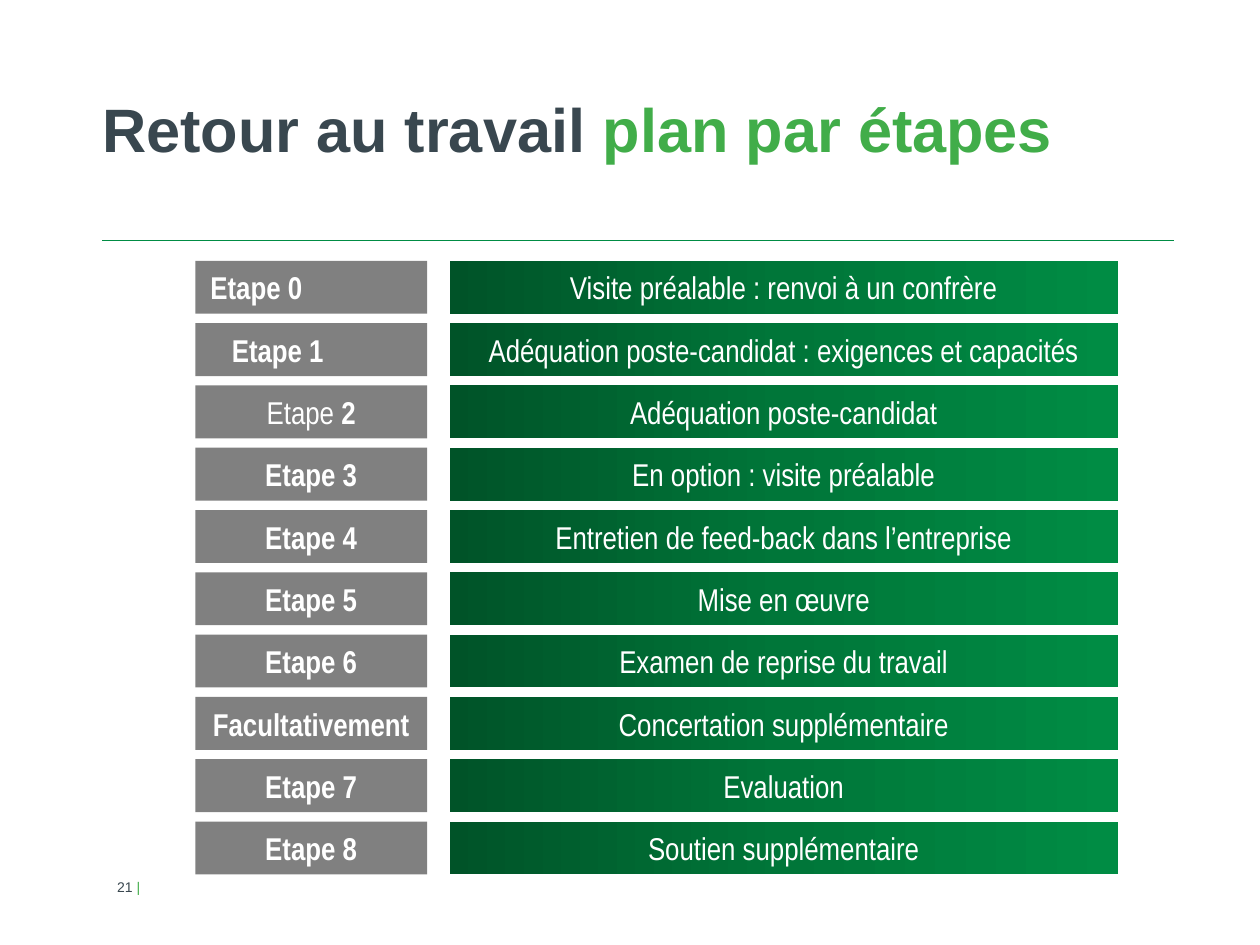
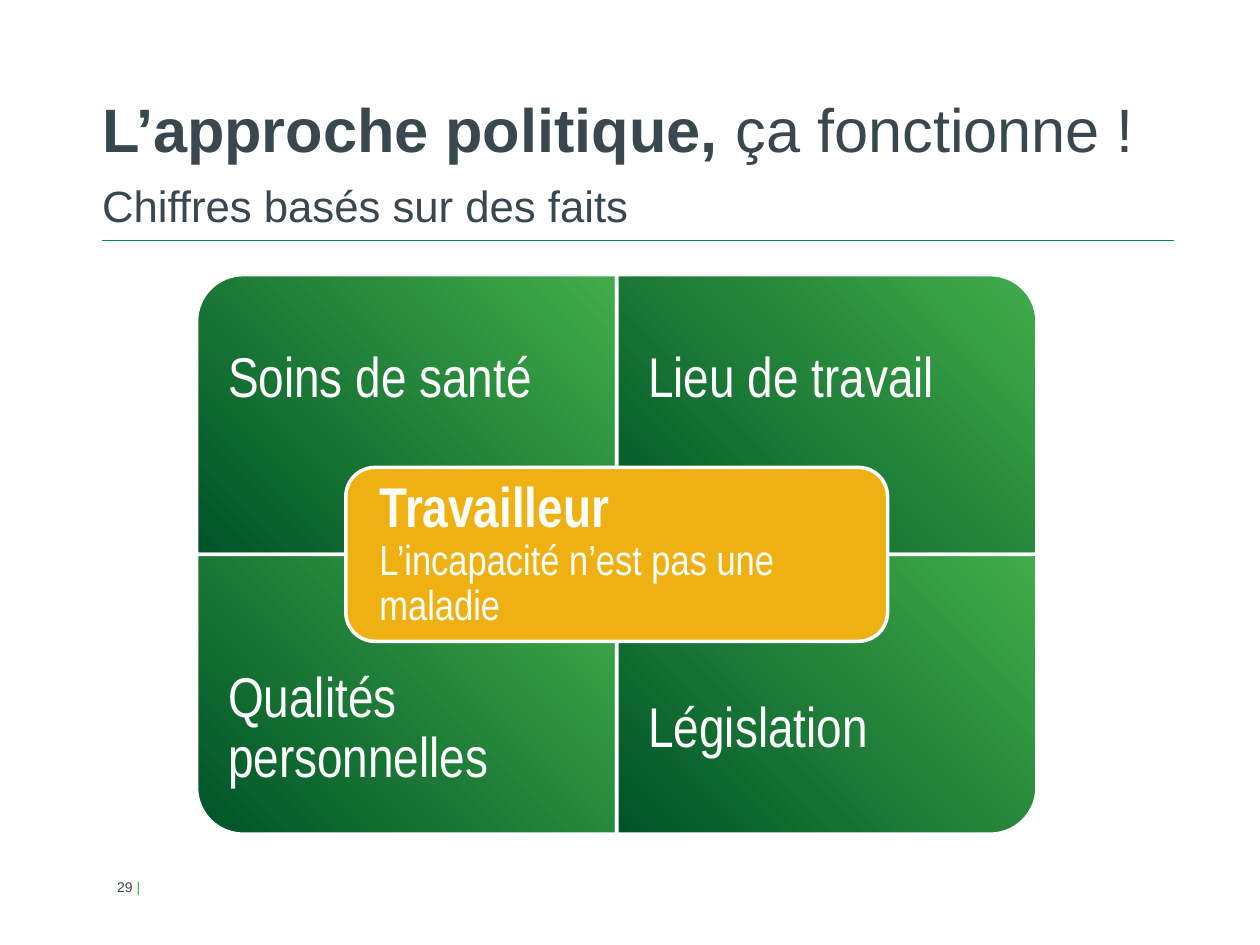
import pptx
import pptx.util
import pptx.dml.color
import pptx.enum.shapes
import pptx.enum.text
import pptx.oxml
from lxml import etree
from pptx.oxml.ns import qn

Inches = pptx.util.Inches
KIND = pptx.enum.shapes.MSO_SHAPE
ALIGN = pptx.enum.text.PP_ALIGN
ANCHOR = pptx.enum.text.MSO_ANCHOR

# Shared colours and fonts
SLATE, LIME, GREEN, DARK = "39474F", "41AD49", "008C44", "005328"
WHITE, GREY, GOLD = "FFFFFF", "808080", "EEB111"
SANS, SLIM = "Arial", "Arial Narrow"


def ink(code):
    return pptx.dml.color.RGBColor.from_string(code)


def write(shape, paras, size=18, font=SLIM, color=WHITE, bold=False,
          align=ALIGN.LEFT, anchor=ANCHOR.MIDDLE, inset=(0, 0, 0, 0), lines=None):
    """Each paragraph is a list of (text, format changes) pairs."""
    frame = shape.text_frame
    frame.word_wrap = True
    frame.auto_size = pptx.enum.text.MSO_AUTO_SIZE.NONE
    frame.vertical_anchor = anchor
    (frame.margin_left, frame.margin_top,
     frame.margin_right, frame.margin_bottom) = map(Inches, inset)
    for i, runs in enumerate(paras):
        para = frame.add_paragraph() if i else frame.paragraphs[0]
        para.alignment = align
        para.space_before = pptx.util.Pt(0)
        if lines:
            para.line_spacing = lines
        for text, change in runs:
            run = para.add_run()
            run.text = text
            run.font.name = font
            run.font.size = pptx.util.Pt(change.get("size", size))
            run.font.bold = change.get("bold", bold)
            run.font.color.rgb = ink(change.get("color", color))


def blend(shape, stops, angle):
    """Fill with a gradient that stays fixed when the shape turns."""
    shape.fill.gradient()
    shape.fill.gradient_angle = angle
    grad = shape._element.spPr.find(qn("a:gradFill"))
    grad.set("rotWithShape", "0")
    group = grad.find(qn("a:gsLst"))
    for stop in list(group):
        group.remove(stop)
    for pos, code in stops:
        stop = etree.SubElement(group, qn("a:gs"), pos=str(pos * 1000))
        etree.SubElement(stop, qn("a:srgbClr"), val=code)


def block(slide, kind, box, fill=None, edge=None):
    shape = slide.shapes.add_shape(kind, *map(Inches, box))
    shape.shadow.inherit = False
    if fill:
        shape.fill.solid()
        shape.fill.fore_color.rgb = ink(fill)
    if edge:
        shape.line.color.rgb = ink(edge)
        shape.line.width = pptx.util.Pt(2)
    else:
        shape.line.fill.background()
    return shape


def place(shape, box):
    shape.left, shape.top, shape.width, shape.height = map(Inches, box)
    return shape


def label(slide, box, paras, **form):
    write(slide.shapes.add_textbox(*map(Inches, box)), paras, **form)


def base(deck, layout, number, title, sub=None):
    """Title, optional subtitle, rule and page number."""
    slide = deck.slides.add_slide(deck.slide_layouts[layout])
    write(place(slide.shapes.title, (0.81, 0.34, 8.51, 0.97)), [title],
          size=35, font=SANS, color=SLATE, bold=True, anchor=ANCHOR.BOTTOM)
    if sub:
        write(place(slide.placeholders[1], (0.81, 1.42, 8.51, 0.47)), [[(sub, {})]],
              size=25, font=SANS, color=SLATE, anchor=ANCHOR.TOP)
    rule = slide.shapes.add_connector(
        pptx.enum.shapes.MSO_CONNECTOR.STRAIGHT,
        Inches(0.81), Inches(1.91), Inches(9.32), Inches(1.91))
    rule.line.color.rgb = ink(GREEN)
    rule.line.width = pptx.util.Pt(0.5)
    etree.SubElement(rule._element.spPr, qn("a:effectLst"))
    label(slide, (0.93, 6.9, 2.33, 0.28),
          [[(f"{number} ", {}), ("|", {"color": LIME})]],
          size=8, font=SANS, color=SLATE)
    return slide


def ladder(slide, box, steps):
    """Rows of a grey step name and a green description."""
    left, top, width, height = box
    tall, name, gap = 0.42, 1.84, 0.18
    pitch = (height - tall) / (len(steps) - 1)
    for i, (runs, text, shift) in enumerate(steps):
        y = top + i * pitch
        tag = block(slide, KIND.RECTANGLE, (left, y, name, tall), GREY)
        write(tag, [runs], bold=True, inset=(shift or 0.1, 0.05, 0.1, 0.05),
              align=ALIGN.LEFT if shift else ALIGN.CENTER)
        bar = block(slide, KIND.RECTANGLE,
                    (left + name + gap, y, width - name - gap, tall))
        blend(bar, [(0, DARK), (50, "007639"), (100, GREEN)], 0)
        write(bar, [[(text, {})]], align=ALIGN.CENTER, inset=(0.1, 0.05, 0.1, 0.05))


def matrix(slide, box, names, core):
    """Four quarters, rounded on the outside, around a central box."""
    left, top, width, height = box
    wide, tall, deep = width / 2, height / 2, height * 3 / 8
    for i, (name, turn) in enumerate(zip(names, (270, 0, 180, 90))):
        row, col = divmod(i, 2)
        x, y = left + col * wide, top + row * tall
        w, h = (tall, wide) if turn % 180 else (wide, tall)
        part = block(slide, KIND.ROUND_1_RECTANGLE,
                     (x + (wide - w) / 2, y + (tall - h) / 2, w, h), edge=WHITE)
        part.rotation = turn
        blend(part, [(0, DARK), (100, LIME)], 45)
        label(slide, (x, y + row * (tall - deep), wide, deep), [[(name, {})]],
              size=32, lines=0.9, inset=(0.25,) * 4)
    w, h = 4.3, 1.38
    heart = block(slide, KIND.ROUNDED_RECTANGLE,
                  (left + (width - w) / 2, top + (height - h) / 2, w, h), GOLD, WHITE)
    write(heart, core, size=24, lines=0.9, inset=(0.2,) * 4)


def main():
    deck = pptx.Presentation()
    deck.slide_width, deck.slide_height = Inches(10), Inches(7.5)

    # Step plan
    texts = ["Visite préalable : renvoi à un confrère",
             "Adéquation poste-candidat : exigences et capacités",
             "Adéquation poste-candidat", "En option : visite préalable",
             "Entretien de feed-back dans l’entreprise", "Mise en œuvre",
             "Examen de reprise du travail", "Evaluation", "Soutien supplémentaire"]
    shifts = {0: 0.12, 1: 0.29}
    steps = [([("Etape ", {"bold": i != 2}), (str(i), {})], text, shifts.get(i))
             for i, text in enumerate(texts)]
    steps.insert(7, ([("Facultativement", {})], "Concertation supplémentaire", None))
    slide = base(deck, 5, 21, [("Retour au travail ", {}),
                               ("plan par étapes", {"color": LIME})])
    ladder(slide, (1.55, 2.07, 7.32, 4.87), steps)

    # Policy approach
    slide = base(deck, 0, 29, [("L’approche politique, ", {}),
                               ("ça fonctionne !", {"bold": False})],
                 "Chiffres basés sur des faits")
    matrix(slide, (1.56, 2.18, 6.67, 4.44),
           ["Soins de santé", "Lieu de travail", "Qualités personnelles", "Législation"],
           [[("Travailleur", {"size": 32, "bold": True})],
            [("L’incapacité n’est pas une maladie", {})]])
    deck.save("out.pptx")


if __name__ == "__main__":
    main()
